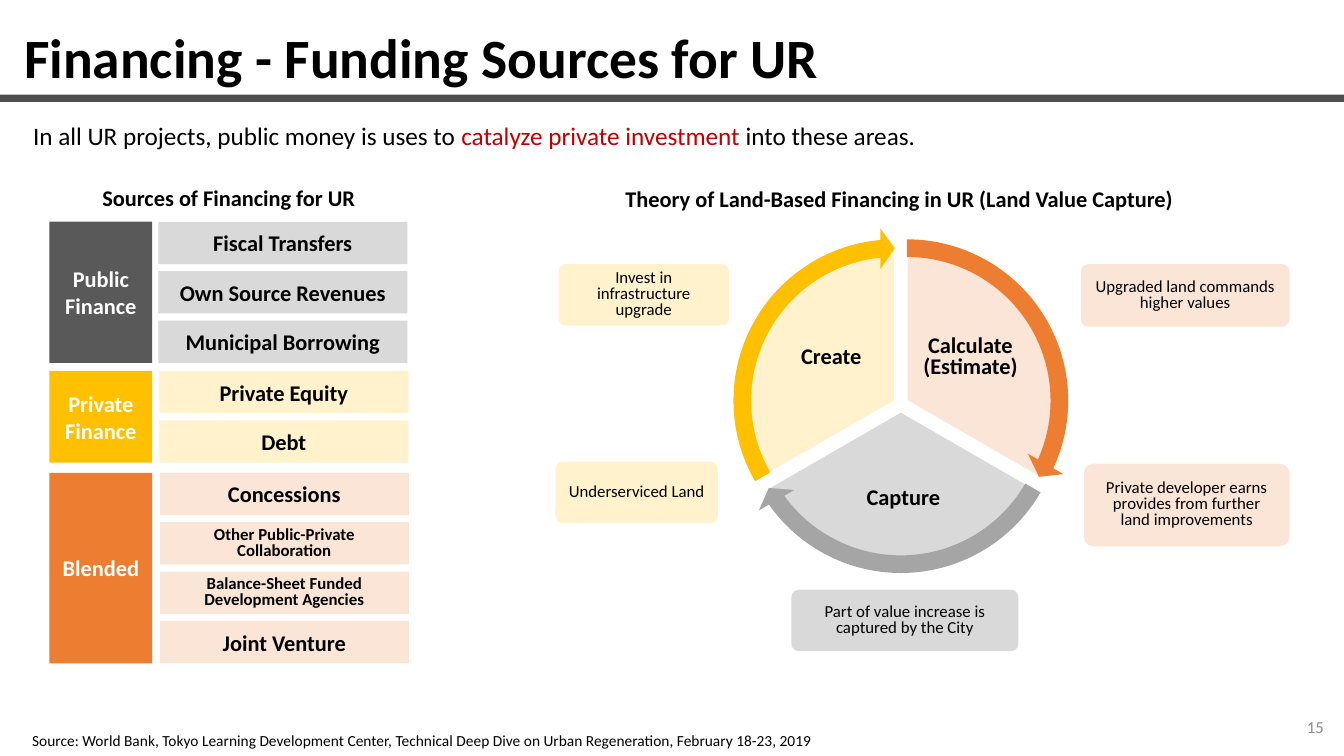
from pptx import Presentation
from pptx.dml.color import RGBColor
from pptx.enum.shapes import MSO_SHAPE as Preset
from pptx.enum.text import MSO_ANCHOR as Anchor, MSO_AUTO_SIZE as AutoSize, PP_ALIGN as Align
from pptx.util import Inches, Pt

FONT = "Calibri"
BLACK, WHITE, RED, BAR_GRAY = "000000", "FFFFFF", "C00000", "4E4E4E"
DARK_GRAY, MID_GRAY, LIGHT_GRAY, NUMBER_GRAY = "595959", "A5A5A5", "D9D9D9", "8C8C8C"
YELLOW, PALE_YELLOW = "FFC000", "FFF2CC"
ORANGE, PALE_ORANGE = "ED7D31", "FBE5D6"

# (label, fill, pale fill, top, height, left of the rows, [(source, size)])
FINANCE_GROUPS = [
    ("Public Finance", DARK_GRAY, LIGHT_GRAY, 2.2, 1.4, 1.57,
     [("Fiscal Transfers", 16), ("Own Source Revenues", 16), ("Municipal Borrowing", 16)]),
    ("Private Finance", YELLOW, PALE_YELLOW, 3.68, 0.91, 1.58,
     [("Private Equity", 16), ("Debt", 16)]),
    ("Blended", ORANGE, PALE_ORANGE, 4.69, 1.89, 1.585,
     [("Concessions", 16), ("Other Public-Private Collaboration", 12),
      ("Balance-Sheet Funded Development Agencies", 12), ("Joint Venture", 16)]),
]
ROW_WIDTH, ROW_HEIGHT = 2.47, 0.42

# (label, label box, line spacing, wedge corner, wedge angles, pale fill)
WEDGES = [
    ("Calculate\n(Estimate)", (9.08, 3.09, 1.09, 0.91), 0.8, (7.47, 2.45), (162, 18), PALE_ORANGE),
    ("Capture", (8.14, 4.54, 1.64, 0.8), 0.9, (7.41, 2.56), (18, 90), LIGHT_GRAY),
    ("Create", (7.7, 3.09, 1.09, 0.91), 0.9, (7.35, 2.45), (90, 162), PALE_YELLOW),
]
WEDGE_SIZE = 3.05

# (corner, head angle, tail angle, fill)
CYCLE_ARROWS = [
    ((7.28, 2.26), 14.725, 161.994, ORANGE),
    ((7.22, 2.37), 86.72, 18.005, MID_GRAY),
    ((7.16, 2.26), 158.73, 90, YELLOW),
]
ARROW_SIZE = 3.43

NOTES = [
    ("Upgraded land commands higher values", (10.72, 2.62, 2.07, 0.62), PALE_ORANGE),
    ("Private developer earns provides from further land improvements",
     (10.75, 4.6, 2.04, 0.82), PALE_ORANGE),
    ("Part of value increase is captured by the City", (7.85, 5.85, 2.25, 0.61), LIGHT_GRAY),
    ("Underserviced Land", (5.51, 4.58, 1.61, 0.61), PALE_YELLOW),
    ("Invest in infrastructure upgrade", (5.54, 2.62, 1.69, 0.61), PALE_YELLOW),
]


def rgb(color):
    return RGBColor.from_string(color)


def write(frame, text, size=16, color=BLACK, bold=False, align=Align.CENTER,
          anchor=Anchor.MIDDLE, spacing=1.0, inset=None):
    """Fill a frame with a string, or with (string, colour) runs; a newline starts a paragraph."""
    frame.word_wrap = True
    frame.auto_size = AutoSize.NONE
    frame.vertical_anchor = anchor
    if inset is not None:
        frame.margin_left = frame.margin_right = Inches(inset)
        frame.margin_top = frame.margin_bottom = Inches(inset)
    paragraphs = [[(line, color)] for line in text.split("\n")] if isinstance(text, str) else [text]
    for index, runs in enumerate(paragraphs):
        paragraph = frame.add_paragraph() if index else frame.paragraphs[0]
        paragraph.alignment = align
        paragraph.line_spacing = spacing
        for words, run_color in runs:
            run = paragraph.add_run()
            run.text = words
            run.font.name = FONT
            run.font.size = Pt(size)
            run.font.bold = bold
            run.font.color.rgb = rgb(run_color)


def add_text(slide, box, text, **text_format):
    label = slide.shapes.add_textbox(*map(Inches, box))
    write(label.text_frame, text, **text_format)


def add_block(slide, preset, box, fill, adjustments=(), outline=None):
    block = slide.shapes.add_shape(preset, *map(Inches, box))
    block.shadow.inherit = False
    block.fill.solid()
    block.fill.fore_color.rgb = rgb(fill)
    if outline:
        block.line.color.rgb = rgb(outline)
        block.line.width = Pt(1)
    else:
        block.line.fill.background()
    for index, value in enumerate(adjustments):
        block.adjustments[index] = value
    return block


def set_title(slide, text):
    title = slide.shapes.title
    title.left, title.top, title.width, title.height = map(Inches, (0.14, 0.26, 12.85, 0.69))
    write(title.text_frame, text, size=39.6, bold=True, align=Align.LEFT, spacing=0.9)


def add_finance_group(slide, label, fill, pale_fill, top, height, row_left, sources):
    category = add_block(slide, Preset.RECTANGLE, (0.49, top, 1.02, height), fill)
    write(category.text_frame, label, color=WHITE, bold=True)
    pitch = (height - ROW_HEIGHT) / (len(sources) - 1)
    for index, (source, size) in enumerate(sources):
        row_box = (row_left, top + index * pitch, ROW_WIDTH, ROW_HEIGHT)
        row = add_block(slide, Preset.RECTANGLE, row_box, pale_fill)
        write(row.text_frame, source, size=size, bold=True, spacing=0.8 if size < 16 else 1.0)


def add_value_cycle(slide):
    for label, label_box, spacing, corner, angles, fill in WEDGES:
        add_block(slide, Preset.PIE, (*corner, WEDGE_SIZE, WEDGE_SIZE), fill, angles, WHITE)
        add_text(slide, label_box, label, bold=True, spacing=spacing, inset=0.02)
    for corner, head_angle, tail_angle, fill in CYCLE_ARROWS:
        add_block(slide, Preset.CIRCULAR_ARROW, (*corner, ARROW_SIZE, ARROW_SIZE), fill,
                  (0.051, 3.275, head_angle, tail_angle, 0.059))


def main():
    deck = Presentation()
    deck.slide_width, deck.slide_height = Inches(13.33), Inches(7.5)
    slide = deck.slides.add_slide(deck.slide_layouts[5])

    set_title(slide, "Financing - Funding Sources for UR")
    add_block(slide, Preset.RECTANGLE, (0, 0.94, 13.33, 0.07), BAR_GRAY)
    add_text(slide, (10.23, 7.01, 3, 0.4), "15", size=12, color=NUMBER_GRAY, align=Align.RIGHT)
    intro = [("In all UR projects, public money is uses to ", BLACK),
             ("catalyze private investment ", RED), ("into these areas.", BLACK)]
    add_text(slide, (0.23, 1.2, 12.93, 0.35), intro, size=18, align=Align.LEFT,
             anchor=Anchor.TOP, spacing=0.8)

    add_text(slide, (0.51, 1.78, 3.52, 0.37), "Sources of Financing for UR",
             bold=True, anchor=Anchor.TOP)
    for group in FINANCE_GROUPS:
        add_finance_group(slide, *group)

    add_text(slide, (5.59, 1.79, 6.66, 0.37),
             "Theory of Land-Based Financing in UR (Land Value Capture)",
             bold=True, anchor=Anchor.TOP)
    add_value_cycle(slide)
    for text, box, fill in NOTES:
        note = add_block(slide, Preset.ROUNDED_RECTANGLE, box, fill, [0.118])
        write(note.text_frame, text, size=12, spacing=0.8)

    add_text(slide, (0.22, 7.2, 8.36, 0.29),
             "Source: World Bank, Tokyo Learning Development Center, "
             "Technical Deep Dive on Urban Regeneration, February 18-23, 2019",
             size=11, align=Align.LEFT, anchor=Anchor.TOP)
    deck.save("out.pptx")


if __name__ == "__main__":
    main()
